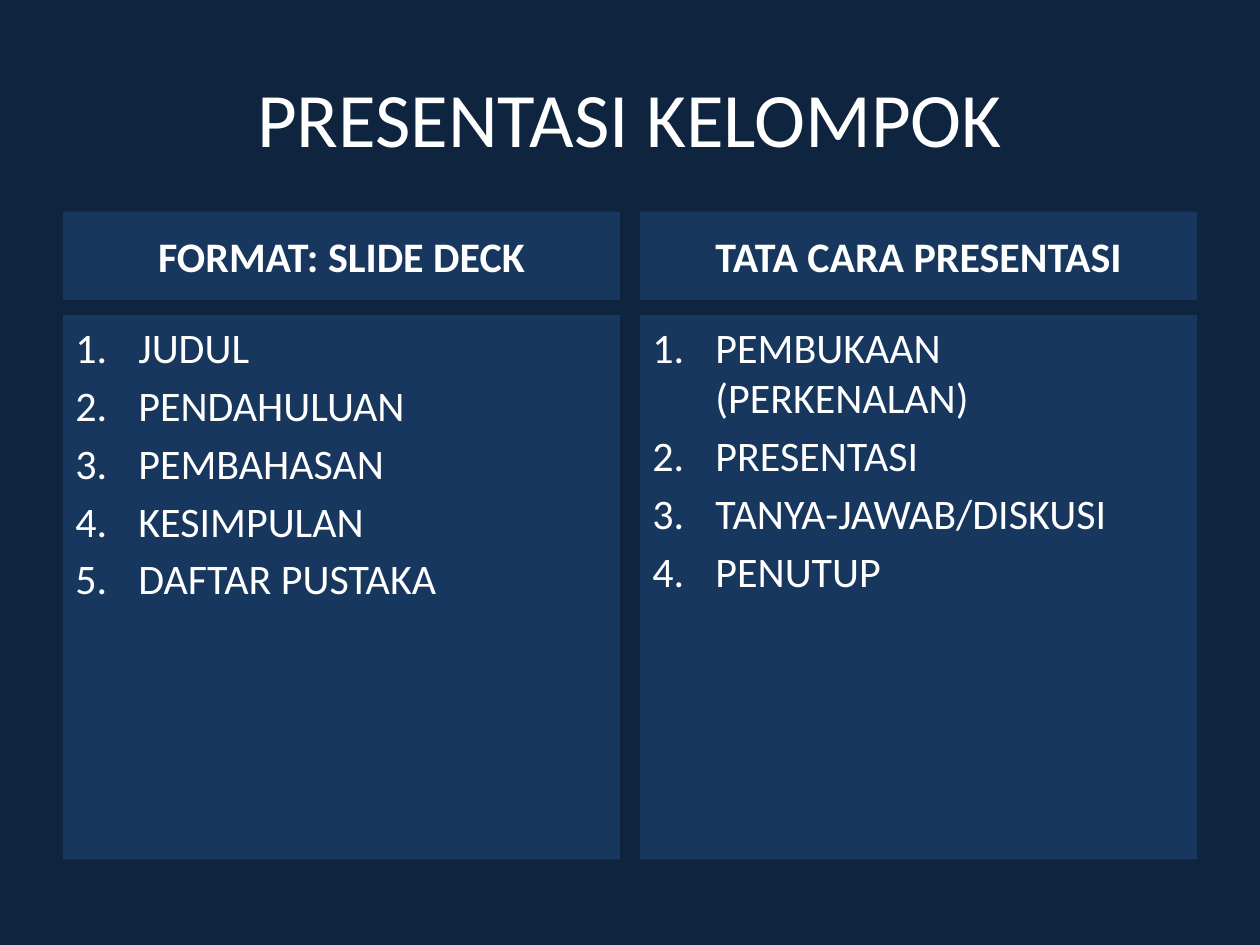
import pptx
import pptx.util
import pptx.dml.color
import pptx.enum.shapes
import pptx.enum.text
import pptx.oxml.ns
import lxml.etree

Inches = pptx.util.Inches
Align = pptx.enum.text.PP_ALIGN
Anchor = pptx.enum.text.MSO_ANCHOR

COLORS = {"background": "0F243E", "panel": "17375E", "text": "FFFFFF"}
FONT = "Calibri"
MARGIN = 0.5
COLUMN_WIDTH = 4.42
COLUMN_STEP = 4.58

COLUMNS = [
    ("FORMAT: SLIDE DECK",
     ["JUDUL", "PENDAHULUAN", "PEMBAHASAN", "KESIMPULAN", "DAFTAR PUSTAKA"]),
    ("TATA CARA PRESENTASI",
     ["PEMBUKAAN (PERKENALAN)", "PRESENTASI", "TANYA-JAWAB/DISKUSI", "PENUTUP"]),
]


def color(name):
    return pptx.dml.color.RGBColor.from_string(COLORS[name])


def write_text(frame, lines, size=24, bold=False, align=Align.LEFT,
               anchor=Anchor.TOP, numbered=False):
    frame.word_wrap = True
    frame.vertical_anchor = anchor
    for index, line in enumerate(lines):
        paragraph = frame.add_paragraph() if index else frame.paragraphs[0]
        paragraph.alignment = align
        if index:
            paragraph.space_before = pptx.util.Pt(4.3)
        if numbered:
            number_paragraph(paragraph)
        run = paragraph.add_run()
        run.text = line
        run.font.name = FONT
        run.font.size = pptx.util.Pt(size)
        run.font.bold = bold
        run.font.color.rgb = color("text")


def number_paragraph(paragraph, indent=0.5):
    properties = paragraph._p.get_or_add_pPr()
    properties.set("marL", str(Inches(indent)))
    properties.set("indent", str(-Inches(indent)))
    tag = pptx.oxml.ns.qn
    bullet_font = lxml.etree.SubElement(properties, tag("a:buFont"))
    bullet_font.set("typeface", "+mj-lt")
    bullet = lxml.etree.SubElement(properties, tag("a:buAutoNum"))
    bullet.set("type", "arabicPeriod")


class SlideBuilder:
    def __init__(self, presentation):
        self.slide = presentation.slides.add_slide(presentation.slide_layouts[6])
        fill = self.slide.background.fill
        fill.solid()
        fill.fore_color.rgb = color("background")

    def title(self, text, left, top, width, height):
        box = self.slide.shapes.add_textbox(
            Inches(left), Inches(top), Inches(width), Inches(height))
        write_text(box.text_frame, [text], size=44, align=Align.CENTER,
                   anchor=Anchor.MIDDLE)

    def panel(self, lines, left, top, width, height, **text_format):
        shape = self.slide.shapes.add_shape(
            pptx.enum.shapes.MSO_SHAPE.RECTANGLE,
            Inches(left), Inches(top), Inches(width), Inches(height))
        shape.shadow.inherit = False
        shape.fill.solid()
        shape.fill.fore_color.rgb = color("panel")
        shape.line.fill.background()
        write_text(shape.text_frame, lines, **text_format)


def main():
    presentation = pptx.Presentation()
    presentation.slide_width = Inches(10)
    presentation.slide_height = Inches(7.5)
    builder = SlideBuilder(presentation)
    builder.title("PRESENTASI KELOMPOK", MARGIN, 0.3, 9, 1.25)
    for index, (heading, items) in enumerate(COLUMNS):
        left = MARGIN + index * COLUMN_STEP
        builder.panel([heading], left, 1.68, COLUMN_WIDTH, 0.7, bold=True,
                      align=Align.CENTER, anchor=Anchor.MIDDLE)
        builder.panel(items, left, 2.5, COLUMN_WIDTH, 4.32, numbered=True)
    presentation.save("out.pptx")


if __name__ == "__main__":
    main()
